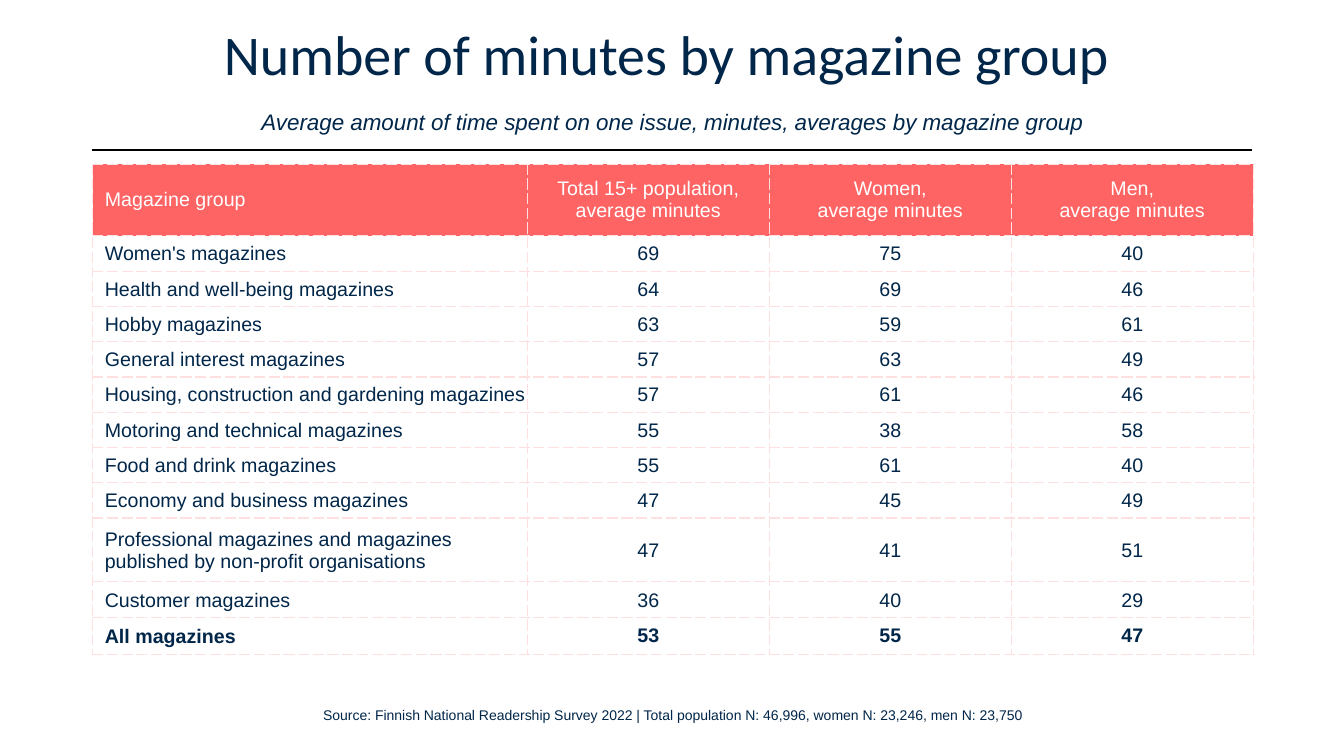
from dataclasses import dataclass
from typing import Any, NamedTuple

from lxml import etree
from pptx import Presentation
from pptx import util as u
from pptx.dml.color import RGBColor
from pptx.enum import shapes, text
from pptx.oxml import ns

EMU_PER_PX = 9144  # 100 px to the inch


@dataclass(frozen=True)
class Theme:
    navy: str = "002649"
    coral: str = "FF6464"
    blush: str = "FFE0E0"
    white: str = "FFFFFF"
    black: str = "000000"
    title_font: str = "Calibri"
    body_font: str = "Arial"
    title_size: int = 40
    subtitle_size: int = 16
    table_size: int = 14
    source_size: int = 10


class Group(NamedTuple):
    name: str
    total: int
    women: int
    men: int
    height: int = 35
    bold: bool = False


class Margins(NamedTuple):
    left: int
    top: int
    right: int
    bottom: int


THEME = Theme()
HEADER_MARGINS = Margins(12, 5, 12, 5)
NAME_MARGINS = Margins(12, 1, 1, 0)
VALUE_MARGINS = Margins(1, 1, 1, 0)
COLUMN_WIDTHS = (431, 240, 240, 240)
HEADER_HEIGHT = 71
HEADERS = (
    "Magazine group",
    "Total 15+ population,\naverage minutes",
    "Women,\naverage minutes",
    "Men,\naverage minutes",
)
GROUPS = (
    Group("Women's magazines", 69, 75, 40),
    Group("Health and well-being magazines", 64, 69, 46),
    Group("Hobby magazines", 63, 59, 61),
    Group("General interest magazines", 57, 63, 49),
    Group("Housing, construction and gardening magazines", 57, 61, 46),
    Group("Motoring and technical magazines", 55, 38, 58),
    Group("Food and drink magazines", 55, 61, 40),
    Group("Economy and business magazines", 47, 45, 49),
    Group("Professional magazines and magazines published by non-profit organisations",
          47, 41, 51, height=63),
    Group("Customer magazines", 36, 40, 29, height=36),
    Group("All magazines", 53, 55, 47, height=36, bold=True),
)


def px(length: int) -> u.Emu:
    return u.Emu(length * EMU_PER_PX)


def apply_format(target: Any, values: dict[str, Any]) -> None:
    for name, value in values.items():
        setattr(target, name, value)


def format_font(font: Any, name: str, size: int, color: str, **extra: Any) -> None:
    apply_format(font, {"name": name, "size": u.Pt(size), "bold": False, **extra})
    font.color.rgb = RGBColor.from_string(color)


def add_title(slide: Any) -> None:
    title = slide.shapes.title
    apply_format(title, {"left": px(92), "top": px(32), "width": px(1150), "height": px(107)})
    apply_format(title.text_frame, {
        "word_wrap": True,
        "auto_size": text.MSO_AUTO_SIZE.NONE,
        "vertical_anchor": text.MSO_ANCHOR.MIDDLE,
    })
    paragraph = title.text_frame.paragraphs[0]
    apply_format(paragraph, {
        "alignment": text.PP_ALIGN.CENTER,
        "line_spacing": u.Pt(35),
        "space_after": u.Pt(18),
    })
    heading = paragraph.add_run()
    heading.text = "Number of minutes by magazine group "
    format_font(heading.font, THEME.title_font, THEME.title_size, THEME.navy)
    paragraph.add_line_break()
    subtitle = paragraph.add_run()
    subtitle.text = ("Average amount of time spent on one issue, minutes, "
                     "averages by magazine group")
    format_font(subtitle.font, THEME.body_font, THEME.subtitle_size, THEME.navy, italic=True)


def add_rule(slide: Any) -> None:
    """Draw the horizontal line between the title and the table."""
    rule = slide.shapes.add_connector(
        shapes.MSO_CONNECTOR.STRAIGHT, px(91), px(149), px(1242), px(149))
    rule.line.width = u.Pt(1)
    rule.line.color.rgb = RGBColor.from_string(THEME.black)
    etree.SubElement(rule.element.spPr, ns.qn("a:effectLst"))


def add_dashed_borders(cell: Any) -> None:
    properties = cell._tc.get_or_add_tcPr()
    for side in ("a:lnL", "a:lnR", "a:lnT", "a:lnB"):
        border = etree.SubElement(properties, ns.qn(side), w=str(u.Pt(1)))
        fill = etree.SubElement(border, ns.qn("a:solidFill"))
        etree.SubElement(fill, ns.qn("a:srgbClr"), val=THEME.blush)
        etree.SubElement(border, ns.qn("a:prstDash"), val="sysDash")


def fill_cell(cell: Any, content: str, margins: Margins, color: str,
              centered: bool, bold: bool = False, background: str | None = None) -> None:
    add_dashed_borders(cell)
    if background:
        cell.fill.solid()
        cell.fill.fore_color.rgb = RGBColor.from_string(background)
    else:
        cell.fill.background()
    apply_format(cell, {f"margin_{side}": px(value)
                        for side, value in margins._asdict().items()})
    cell.vertical_anchor = text.MSO_ANCHOR.MIDDLE
    cell.text_frame.text = content
    for paragraph in cell.text_frame.paragraphs:
        paragraph.alignment = text.PP_ALIGN.CENTER if centered else text.PP_ALIGN.LEFT
        for run in paragraph.runs:
            format_font(run.font, THEME.body_font, THEME.table_size, color, bold=bold)


def add_minutes_table(slide: Any) -> None:
    heights = [HEADER_HEIGHT, *(group.height for group in GROUPS)]
    table = slide.shapes.add_table(
        len(heights), len(COLUMN_WIDTHS), px(92), px(163),
        px(sum(COLUMN_WIDTHS)), px(sum(heights))).table
    apply_format(table, {"first_row": False, "horz_banding": False})
    for column, width in zip(table.columns, COLUMN_WIDTHS):
        column.width = px(width)
    for row, height in zip(table.rows, heights):
        row.height = px(height)

    for index, header in enumerate(HEADERS):
        fill_cell(table.cell(0, index), header, HEADER_MARGINS, THEME.white,
                  centered=index > 0, background=THEME.coral)
    for row_index, group in enumerate(GROUPS, start=1):
        value_margins = HEADER_MARGINS if group.bold else VALUE_MARGINS
        for index, value in enumerate((group.name, group.total, group.women, group.men)):
            fill_cell(table.cell(row_index, index), str(value),
                      value_margins if index else NAME_MARGINS, THEME.navy,
                      centered=index > 0, bold=group.bold)


def add_source(slide: Any) -> None:
    box = slide.shapes.add_textbox(px(306), px(696), px(722), px(27))
    apply_format(box.text_frame, {
        "word_wrap": False, "auto_size": text.MSO_AUTO_SIZE.SHAPE_TO_FIT_TEXT})
    paragraph = box.text_frame.paragraphs[0]
    paragraph.alignment = text.PP_ALIGN.CENTER
    run = paragraph.add_run()
    run.text = ("Source: Finnish National Readership Survey 2022 | "
                "Total population N: 46,996, women N: 23,246, men N: 23,750")
    format_font(run.font, THEME.body_font, THEME.source_size, THEME.navy)


def main() -> None:
    presentation = Presentation()
    apply_format(presentation, {"slide_width": px(1333), "slide_height": px(750)})
    title_only = presentation.slide_layouts[5]
    slide = presentation.slides.add_slide(title_only)
    add_rule(slide)
    add_title(slide)
    add_minutes_table(slide)
    add_source(slide)
    presentation.save("out.pptx")


if __name__ == "__main__":
    main()
